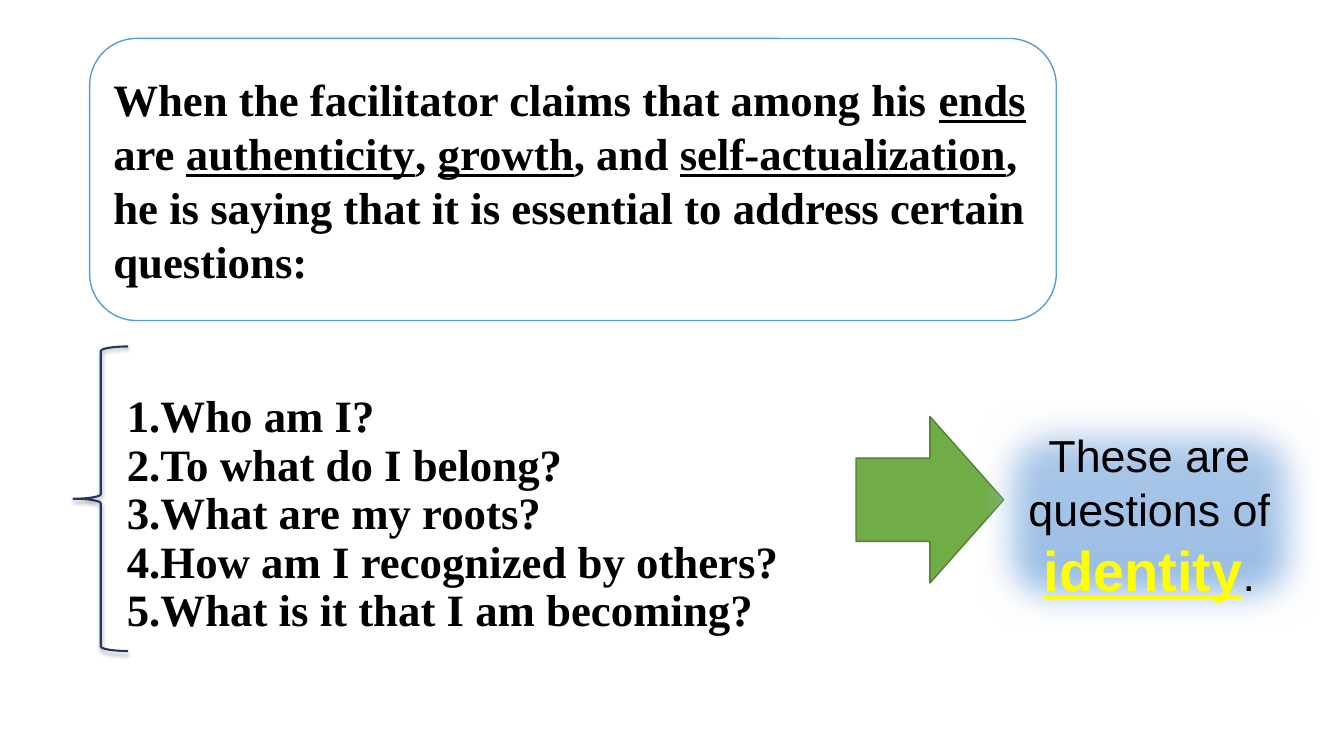
from lxml import etree
from pptx import Presentation
from pptx.dml.color import RGBColor
from pptx.enum.shapes import MSO_SHAPE as Shape
from pptx.enum.text import MSO_ANCHOR as Anchor, PP_ALIGN as Align
from pptx.oxml.ns import qn
from pptx.util import Pt

COLORS = {
    "white": "FFFFFF", "black": "000000", "yellow": "FFFF00",
    "blue": "5B9BD5", "navy": "203864", "green": "70AD47",
    "dark_green": "538035", "pale_blue": "B1CBE9", "mid_blue": "93B9E4",
}
SERIF, SANS = "Times New Roman", "Arial"
QUESTIONS = [
    "Who am I?", "To what do I belong?", "What are my roots?",
    "How am I recognized by others?", "What is it that I am becoming?",
]


def color(name):
    return RGBColor.from_string(COLORS[name])


def add_outlined(page, kind, box, line, width, fill=None):
    shape = page.shapes.add_shape(kind, *map(Pt, box))
    shape.shadow.inherit = False
    shape.line.color.rgb = color(line)
    shape.line.width = Pt(width)
    if fill:
        shape.fill.solid()
        shape.fill.fore_color.rgb = color(fill)
    else:
        shape.fill.background()
    return shape


def add_effect(shape, name, **settings):
    effects = shape.element.spPr.find(qn("a:effectLst"))
    return etree.SubElement(effects, qn(name), settings)


def start_text(shape, anchor, align):
    frame = shape.text_frame
    frame.word_wrap = True
    frame.vertical_anchor = anchor
    para = frame.paragraphs[0]
    para.alignment = align
    return para


def add_span(para, text, font, size=32, ink="black", bold=False, underline=False):
    span = para.add_run()
    span.text = text
    span.font.name = font
    span.font.size = Pt(size)
    span.font.color.rgb = color(ink)
    span.font.bold = bold
    span.font.underline = underline


# Opening statement; every second span is underlined
def add_statement(page, box):
    panel = add_outlined(page, Shape.ROUNDED_RECTANGLE, box, "blue", 1, "white")
    para = start_text(panel, Anchor.MIDDLE, Align.LEFT)
    spans = [
        "When the facilitator claims that among his ", "ends", " are ",
        "authenticity", ", ", "growth", ", and ", "self-actualization",
        ", he is saying that it is essential to address certain questions:",
    ]
    for index, text in enumerate(spans):
        add_span(para, text, SERIF, bold=True, underline=index % 2 == 1)


# Numbered questions with a brace on their left
def add_questions(page, box):
    left, top, width, height = box
    indent, brace_width, margin = 31, 39, 21
    text_box = page.shapes.add_textbox(
        Pt(left + indent), Pt(top + margin), Pt(width - indent), Pt(height - 28))
    para = start_text(text_box, Anchor.BOTTOM, Align.LEFT)
    para.line_spacing = 0.9
    for number, question in enumerate(QUESTIONS, 1):
        if number > 1:
            para.add_line_break()
        add_span(para, f"{number}.{question}", SERIF, bold=True)

    brace = add_outlined(
        page, Shape.LEFT_BRACE, (left, top, brace_width, height), "navy", 1.5)
    shadow = add_effect(brace, "a:outerShdw", blurRad=str(Pt(3)), dist=str(Pt(2)),
                        dir="5400000", rotWithShape="0")
    shade = etree.SubElement(shadow, qn("a:srgbClr"), val=COLORS["black"])
    etree.SubElement(shade, qn("a:alpha"), val="35000")


# Arrow leading to the soft-edged conclusion
def add_conclusion(page, box):
    left, top, width, height = box
    arrow_width, arrow_height, offset = 105.5, 119, 87
    add_outlined(page, Shape.RIGHT_ARROW,
                 (left, top + 10, arrow_width, arrow_height),
                 "dark_green", 1, "green")
    panel = add_outlined(page, Shape.ROUNDED_RECTANGLE,
                         (left + offset, top, width - offset, height), "blue", 0.5)
    panel.fill.gradient()
    panel.fill.gradient_angle = 270
    for stop, name in zip(panel.fill.gradient_stops, ("pale_blue", "mid_blue")):
        stop.color.rgb = color(name)
    for stop, position in zip(panel.fill.gradient_stops, (0, 1)):
        stop.position = position
    add_effect(panel, "a:softEdge", rad=str(Pt(25)))
    para = start_text(panel, Anchor.MIDDLE, Align.CENTER)
    add_span(para, "These are questions of ", SANS)
    add_span(para, "identity", SANS, 40, "yellow", bold=True, underline=True)
    add_span(para, ".", SANS)


def main():
    deck = Presentation()
    deck.slide_width, deck.slide_height = Pt(960), Pt(540)
    page = deck.slides.add_slide(deck.slide_layouts[6])
    add_statement(page, (64, 27.5, 690.5, 201.5))
    add_questions(page, (52.5, 247.5, 558.5, 217.5))
    add_conclusion(page, (611.5, 287.5, 332, 161))
    deck.save("out.pptx")


if __name__ == "__main__":
    main()
